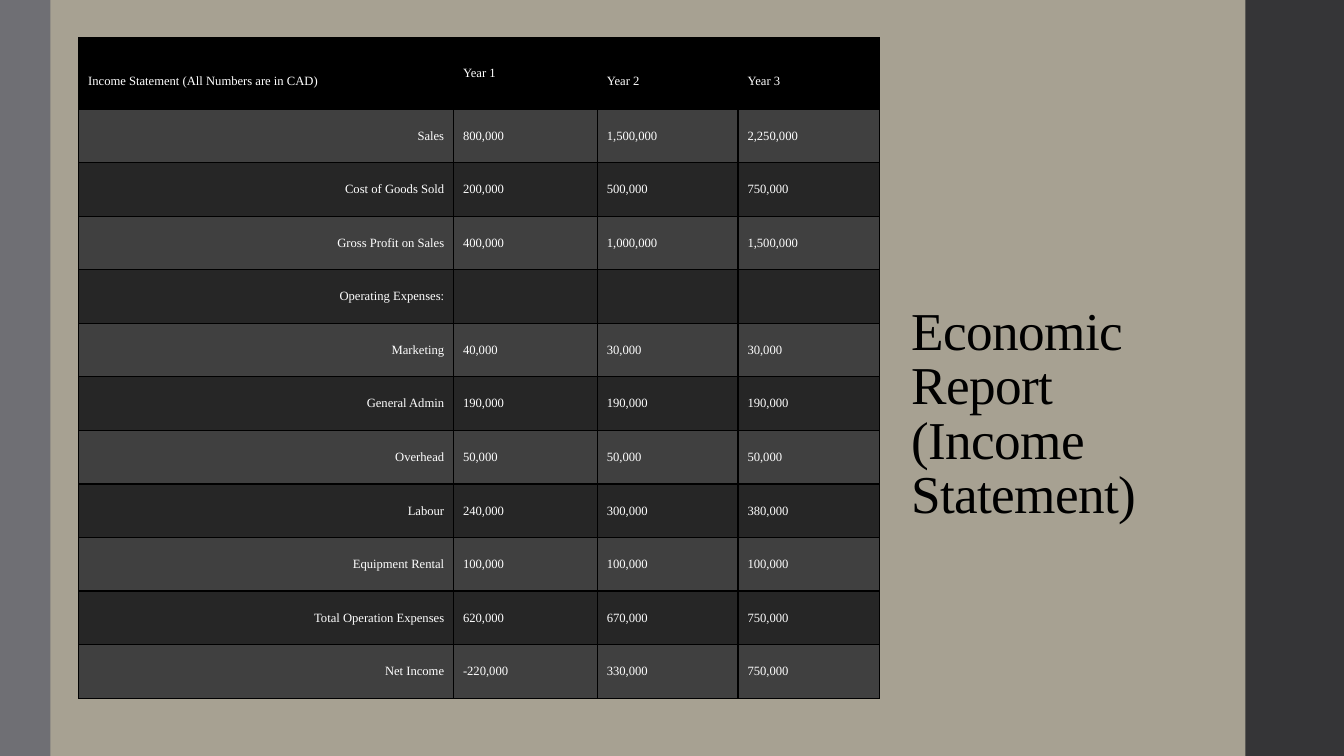
"""Build the income statement slide with its table and title."""
from lxml.etree import SubElement
from pptx import Presentation
from pptx.dml.color import RGBColor
from pptx.enum.shapes import MSO_SHAPE
from pptx.enum.text import MSO_ANCHOR, PP_ALIGN
from pptx.oxml.ns import qn
from pptx.util import Pt

PX = 9525
SLIDE_WIDTH, SLIDE_HEIGHT = 1280, 720
FONT = "Times New Roman"

BLACK = RGBColor(0x00, 0x00, 0x00)
WHITE = RGBColor(0xFF, 0xFF, 0xFF)
SAND = RGBColor(0xA7, 0xA1, 0x92)
CHARCOAL = RGBColor(0x35, 0x35, 0x37)
GREY = RGBColor(0x6F, 0x6F, 0x74)
BAND_FILLS = (RGBColor(0x26, 0x26, 0x26), RGBColor(0x40, 0x40, 0x40))

COLUMN_WIDTHS = (357, 137, 134, 135)
HEADER_HEIGHT, ROW_HEIGHT = 68, 51
CELL_FORMAT = {
    "margin_left": 9 * PX,
    "margin_right": 9 * PX,
    "margin_top": 7 * PX,
    "margin_bottom": 7 * PX,
    "vertical_anchor": MSO_ANCHOR.MIDDLE,
}
LOWERED_FORMAT = CELL_FORMAT | {"margin_top": 21 * PX}
CELL_FONT = {"name": FONT, "size": Pt(9), "bold": False}
TITLE_FONT = {"name": FONT, "size": Pt(38)}

INCOME_STATEMENT = (
    ("Income Statement (All Numbers are in CAD)", "Year 1", "Year 2", "Year 3"),
    ("Sales", "800,000", "1,500,000", "2,250,000"),
    ("Cost of Goods Sold", "200,000", "500,000", "750,000"),
    ("Gross Profit on Sales", "400,000", "1,000,000", "1,500,000"),
    ("Operating Expenses:", "", "", ""),
    ("Marketing", "40,000", "30,000", "30,000"),
    ("General Admin", "190,000", "190,000", "190,000"),
    ("Overhead", "50,000", "50,000", "50,000"),
    ("Labour", "240,000", "300,000", "380,000"),
    ("Equipment Rental", "100,000", "100,000", "100,000"),
    ("Total Operation Expenses", "620,000", "670,000", "750,000"),
    ("Net Income", "-220,000", "330,000", "750,000"),
)


def apply_format(target, values):
    """Set every attribute in values on target."""
    for name, value in values.items():
        setattr(target, name, value)


def to_emu(*lengths):
    """Turn px lengths into EMU."""
    return [length * PX for length in lengths]


def add_side_bar(slide, left, width, color):
    """Add a full-height bar."""
    shape = slide.shapes.add_shape(
        MSO_SHAPE.RECTANGLE, *to_emu(left, 0, width, SLIDE_HEIGHT))
    shape.shadow.inherit = False
    shape.fill.solid()
    shape.fill.fore_color.rgb = color
    shape.line.fill.background()


def add_title(slide, text, left, top, width, height):
    """Add the large title, resting on the bottom of its box."""
    shape = slide.shapes.add_textbox(*to_emu(left, top, width, height))
    apply_format(shape.text_frame,
                 {"word_wrap": True, "vertical_anchor": MSO_ANCHOR.BOTTOM})
    paragraph = shape.text_frame.paragraphs[0]
    paragraph.line_spacing = 0.85
    run = paragraph.add_run()
    run.text = text
    apply_format(run.font, TITLE_FONT)
    run.font.color.rgb = BLACK
    run.font._element.set("spc", "-50")


def add_borders(cell, color):
    """Draw a one-point line on all four sides of a cell."""
    properties = cell._tc.get_or_add_tcPr()
    for side in ("lnL", "lnR", "lnT", "lnB"):
        line = SubElement(properties, qn(f"a:{side}"), w=str(Pt(1)))
        fill = SubElement(line, qn("a:solidFill"))
        SubElement(fill, qn("a:srgbClr"), val=str(color))


def fill_cell(cell, text, cell_format, alignment, color):
    """Write one table cell with its margins, borders and fill."""
    apply_format(cell, cell_format)
    add_borders(cell, BLACK)
    cell.fill.solid()
    cell.fill.fore_color.rgb = color
    paragraph = cell.text_frame.paragraphs[0]
    paragraph.alignment = alignment
    apply_format(paragraph.font, CELL_FONT)
    if text:
        run = paragraph.add_run()
        run.text = text
        apply_format(run.font, CELL_FONT)
        run.font.color.rgb = WHITE


def add_statement_table(slide, rows, left, top):
    """Add the income statement with a black header and alternating rows."""
    height = HEADER_HEIGHT + ROW_HEIGHT * (len(rows) - 1)
    table = slide.shapes.add_table(
        len(rows), len(COLUMN_WIDTHS),
        *to_emu(left, top, sum(COLUMN_WIDTHS), height)).table
    table.horz_banding = False
    for column, width in zip(table.columns, COLUMN_WIDTHS):
        column.width = width * PX
    for row_index, values in enumerate(rows):
        is_header = row_index == 0
        table.rows[row_index].height = (HEADER_HEIGHT if is_header else ROW_HEIGHT) * PX
        color = BLACK if is_header else BAND_FILLS[row_index % 2]
        for column_index, text in enumerate(values):
            is_lowered = is_header and column_index != 1
            is_label = column_index == 0 and not is_header
            fill_cell(table.cell(row_index, column_index), text,
                      LOWERED_FORMAT if is_lowered else CELL_FORMAT,
                      PP_ALIGN.RIGHT if is_label else PP_ALIGN.LEFT, color)


def main():
    """Build and save the presentation."""
    presentation = Presentation()
    apply_format(presentation, {"slide_width": SLIDE_WIDTH * PX,
                                "slide_height": SLIDE_HEIGHT * PX})
    slide = presentation.slides.add_slide(presentation.slide_layouts[6])
    slide.background.fill.solid()
    slide.background.fill.fore_color.rgb = SAND
    add_side_bar(slide, 1186, SLIDE_WIDTH - 1186, CHARCOAL)
    add_side_bar(slide, 0, 48, GREY)
    add_title(slide, "Economic Report (Income Statement)", 859, 80, 300, 424)
    add_statement_table(slide, INCOME_STATEMENT, 75, 36)
    presentation.save("out.pptx")


if __name__ == "__main__":
    main()
